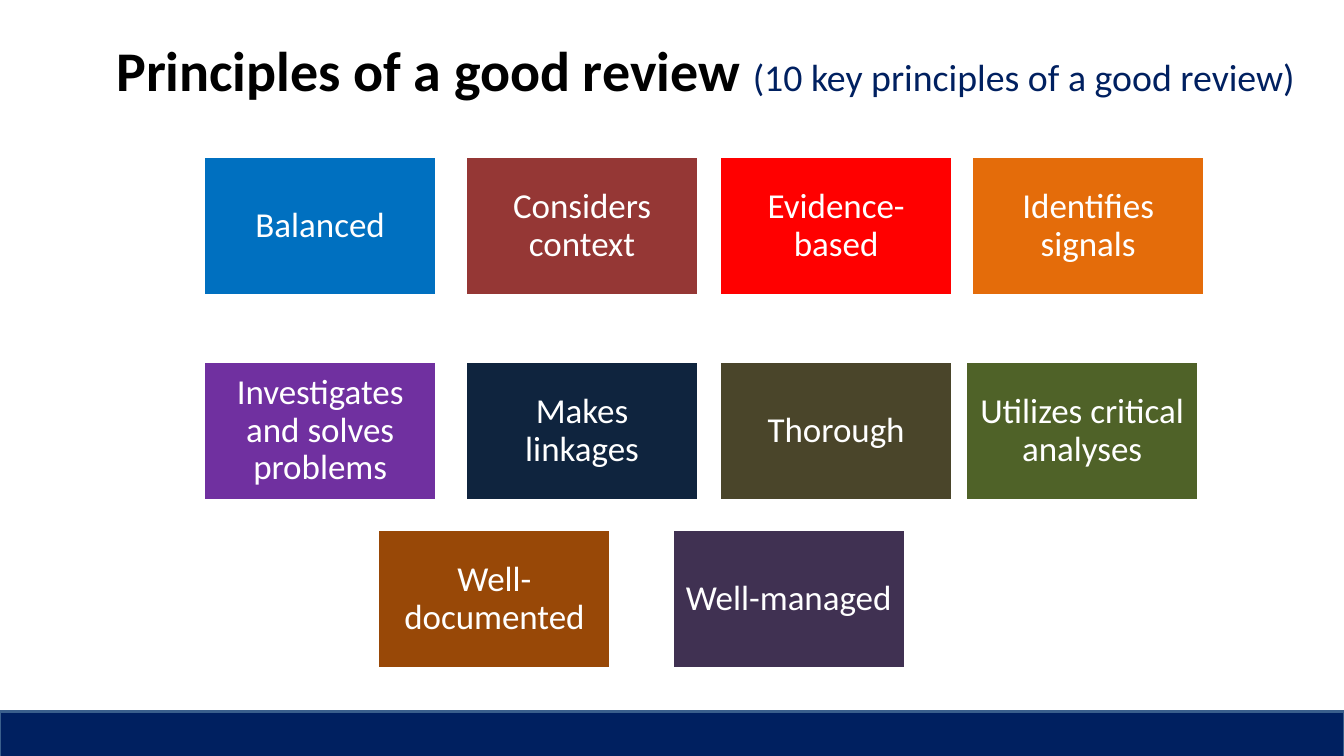
import pptx
import pptx.util
import pptx.dml.color
import pptx.enum.shapes
import pptx.enum.text

Pt = pptx.util.Pt

# Content
TITLE = "Principles of a good review "
SUBTITLE = "(10 key principles of a good review)"
# Each row: top, then (text, fill, left) for every tile
ROWS = [
    (111.6, [
        ("Balanced", "0070C0", 145.5),
        ("Considers context", "953735", 332.6),
        ("Evidence-based", "FF0000", 514.1),
        ("Identifies signals", "E46C0A", 694.1),
    ]),
    (258, [
        ("Investigates and solves problems", "7030A0", 145.5),
        ("Makes linkages", "0F243E", 332.6),
        ("Thorough", "4A452A", 514.1),
        ("Utilizes critical analyses", "4F6228", 689.8),
    ]),
    (378, [
        ("Well-documented", "984807", 270),
        ("Well-managed", "403152", 480.2),
    ]),
]

THEME = {
    "font": "Calibri", "black": "000000", "white": "FFFFFF",
    "navy": "002060", "bar_line": "3A5F8C",
    "title": 40, "subtitle": 27, "tile": 25, "line": 2,
}
PAGE_WIDTH, PAGE_HEIGHT = 960, 540
TILE_WIDTH, TILE_HEIGHT = 166.3, 99.4
TILE_INSET = 7.2


def rgb(value):
    return pptx.dml.color.RGBColor.from_string(value)


def add_text(para, text, size, color, bold=False):
    para.alignment = pptx.enum.text.PP_ALIGN.CENTER
    span = para.add_run()
    span.text = text
    span.font.name = THEME["font"]
    span.font.size = Pt(size)
    span.font.bold = bold
    span.font.color.rgb = rgb(color)


def add_box(page, left, top, width, height, fill, line):
    box = page.shapes.add_shape(
        pptx.enum.shapes.MSO_SHAPE.RECTANGLE,
        Pt(left), Pt(top), Pt(width), Pt(height))
    box.shadow.inherit = False
    box.fill.solid()
    box.fill.fore_color.rgb = rgb(fill)
    box.line.color.rgb = rgb(line)
    box.line.width = Pt(THEME["line"])
    return box


def add_tile(page, text, fill, left, top):
    box = add_box(page, left, top, TILE_WIDTH, TILE_HEIGHT, fill, THEME["white"])
    frame = box.text_frame
    frame.word_wrap = True
    frame.vertical_anchor = pptx.enum.text.MSO_ANCHOR.MIDDLE
    frame.margin_left = frame.margin_right = Pt(TILE_INSET)
    frame.margin_top = frame.margin_bottom = Pt(TILE_INSET)
    para = frame.paragraphs[0]
    para.line_spacing = 0.9
    add_text(para, text, THEME["tile"], THEME["white"])


def main():
    deck = pptx.Presentation()
    deck.slide_width, deck.slide_height = Pt(PAGE_WIDTH), Pt(PAGE_HEIGHT)
    page = deck.slides.add_slide(deck.slide_layouts[5])

    # Title
    title = page.shapes.title
    title.left, title.top = Pt(48), Pt(21.6)
    title.width, title.height = Pt(912), Pt(90)
    frame = title.text_frame
    frame.auto_size = pptx.enum.text.MSO_AUTO_SIZE.NONE
    frame.vertical_anchor = pptx.enum.text.MSO_ANCHOR.TOP
    para = frame.paragraphs[0]
    add_text(para, TITLE, THEME["title"], THEME["black"], bold=True)
    add_text(para, SUBTITLE, THEME["subtitle"], THEME["navy"])

    # Principle tiles
    for top, tiles in ROWS:
        for text, fill, left in tiles:
            add_tile(page, text, fill, left, top)

    # Footer bar
    add_box(page, 0, 508.3, PAGE_WIDTH, 33.8, THEME["navy"], THEME["bar_line"])

    deck.save("out.pptx")


if __name__ == "__main__":
    main()
